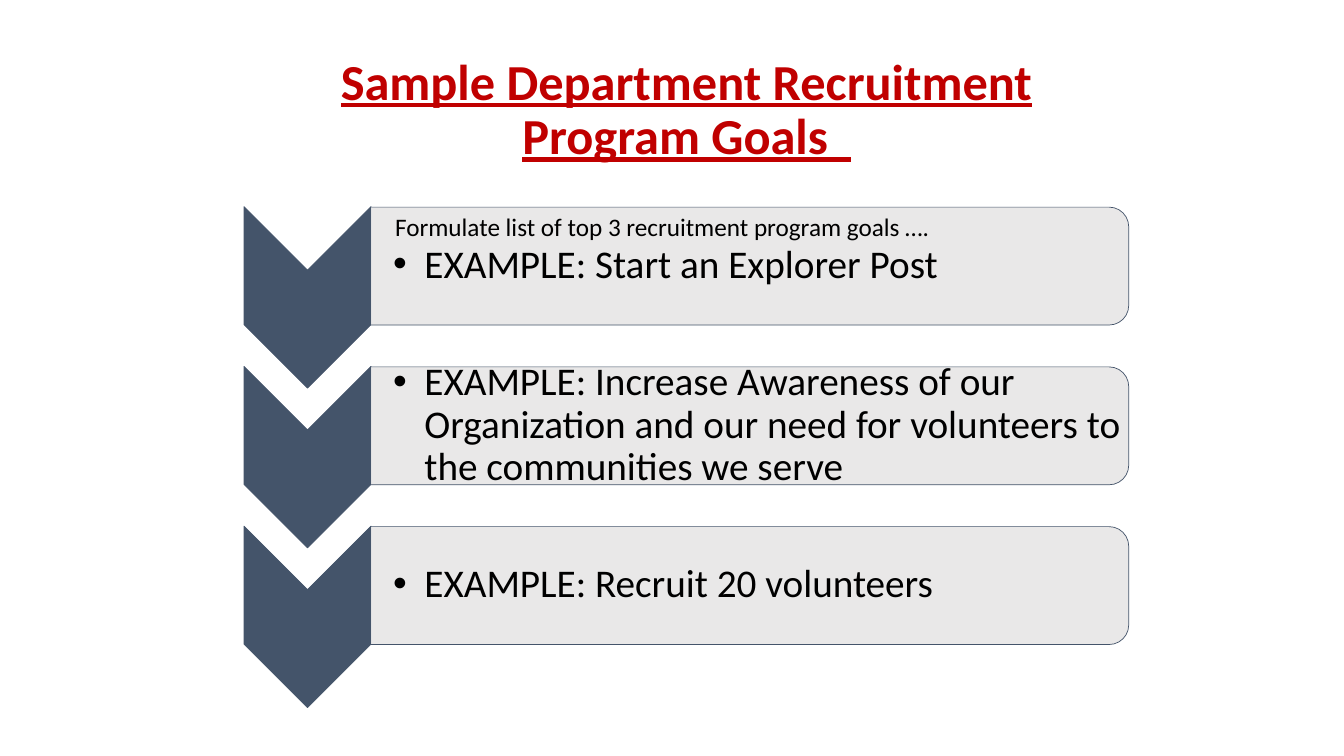
from dataclasses import dataclass

from lxml.etree import SubElement
from pptx import Presentation
from pptx.dml.color import RGBColor
from pptx.enum.shapes import MSO_SHAPE as Preset
from pptx.enum.text import MSO_ANCHOR as Anchor, PP_ALIGN as Align
from pptx.oxml.ns import qn
from pptx.shapes.autoshape import Shape
from pptx.slide import Slide
from pptx.util import Inches, Pt


@dataclass(frozen=True)
class Theme:
    font: str = "Calibri"
    title_color: RGBColor = RGBColor(0xC0, 0x00, 0x00)
    text_color: RGBColor = RGBColor(0x00, 0x00, 0x00)
    chevron_color: RGBColor = RGBColor(0x44, 0x54, 0x6A)
    panel_color: RGBColor = RGBColor(0xE7, 0xE6, 0xE6)
    title_size: int = 36
    goal_size: int = 28
    intro_size: int = 18
    line_width: float = 0.5
    panel_opacity: int = 90


@dataclass(frozen=True)
class Box:
    left: float
    top: float
    width: float
    height: float

    def lowered(self, offset: float) -> "Box":
        return Box(self.left, self.top + offset, self.width, self.height)

    def lengths(self) -> tuple[int, int, int, int]:
        return (Inches(self.left), Inches(self.top),
                Inches(self.width), Inches(self.height))


@dataclass(frozen=True)
class Goal:
    text: str
    row: int


THEME = Theme()
ROW_PITCH = 1.585
CHEVRON = Box(2.15, 2.32, 1.8, 1.26)
PANEL = Box(6.85, -1.12, 1.17, 7.52)
GOAL_TEXT = Box(3.68, 2.11, 7.46, 1.05)
TITLE = Box(2.87, 0.29, 7.88, 1.62)
INTRO = Box(3.82, 2.05, 5.99, 0.4)
GOALS = [
    Goal("EXAMPLE: Start an Explorer Post", 0),
    Goal("EXAMPLE: Increase Awareness of our Organization and our need "
         "for volunteers to the communities we serve", 1),
    Goal("EXAMPLE: Recruit 20 volunteers", 2),
]


def add_turned_shape(slide: Slide, preset: Preset, box: Box, color: RGBColor) -> Shape:
    shape = slide.shapes.add_shape(preset, *box.lengths())
    shape.rotation = 90
    shape.shadow.inherit = False
    shape.fill.solid()
    shape.fill.fore_color.rgb = color
    shape.line.color.rgb = THEME.chevron_color
    shape.line.width = Pt(THEME.line_width)
    return shape


def add_text(slide: Slide, text: str, box: Box, size: int, color: RGBColor) -> Shape:
    label = slide.shapes.add_textbox(*box.lengths())
    label.text_frame.word_wrap = True
    label.text_frame.text = text
    font = label.text_frame.paragraphs[0].runs[0].font
    font.name = THEME.font
    font.size = Pt(size)
    font.color.rgb = color
    return label


def make_translucent(shape: Shape, opacity: int) -> None:
    color = shape.fill._xPr.find(qn("a:solidFill"))[0]
    SubElement(color, qn("a:alpha"), val=str(opacity * 1000))


def add_bullet(label: Shape, indent: float) -> None:
    properties = label.text_frame.paragraphs[0]._p.get_or_add_pPr()
    properties.set("marL", str(Inches(indent)))
    properties.set("indent", str(-Inches(indent)))
    SubElement(properties, qn("a:buFont"), typeface="Arial")
    SubElement(properties, qn("a:buChar"), char="•")


def add_goal(slide: Slide, goal: Goal) -> None:
    offset = goal.row * ROW_PITCH
    add_turned_shape(slide, Preset.CHEVRON, CHEVRON.lowered(offset), THEME.chevron_color)
    panel = add_turned_shape(slide, Preset.ROUND_2_SAME_RECTANGLE,
                             PANEL.lowered(offset), THEME.panel_color)
    make_translucent(panel, THEME.panel_opacity)

    label = add_text(slide, goal.text, GOAL_TEXT.lowered(offset),
                     THEME.goal_size, THEME.text_color)
    frame = label.text_frame
    frame.vertical_anchor = Anchor.MIDDLE
    frame.margin_left = Inches(0.22)
    frame.margin_top = frame.margin_right = frame.margin_bottom = Inches(0.02)
    frame.paragraphs[0].line_spacing = 0.9
    add_bullet(label, 0.31)


def add_title(slide: Slide) -> None:
    title = add_text(slide, "Sample Department Recruitment Program Goals  ", TITLE,
                     THEME.title_size, THEME.title_color)
    title.text_frame.vertical_anchor = Anchor.MIDDLE
    heading = title.text_frame.paragraphs[0]
    heading.alignment = Align.CENTER
    heading.line_spacing = 0.9
    heading.runs[0].font.bold = True
    heading.runs[0].font.underline = True


def main() -> None:
    presentation = Presentation()
    presentation.slide_width = Inches(13.33)
    presentation.slide_height = Inches(7.5)
    slide = presentation.slides.add_slide(presentation.slide_layouts[6])
    for goal in GOALS:
        add_goal(slide, goal)
    add_title(slide)
    add_text(slide, "Formulate list of top 3 recruitment program goals ….", INTRO,
             THEME.intro_size, THEME.text_color)
    presentation.save("out.pptx")


if __name__ == "__main__":
    main()
